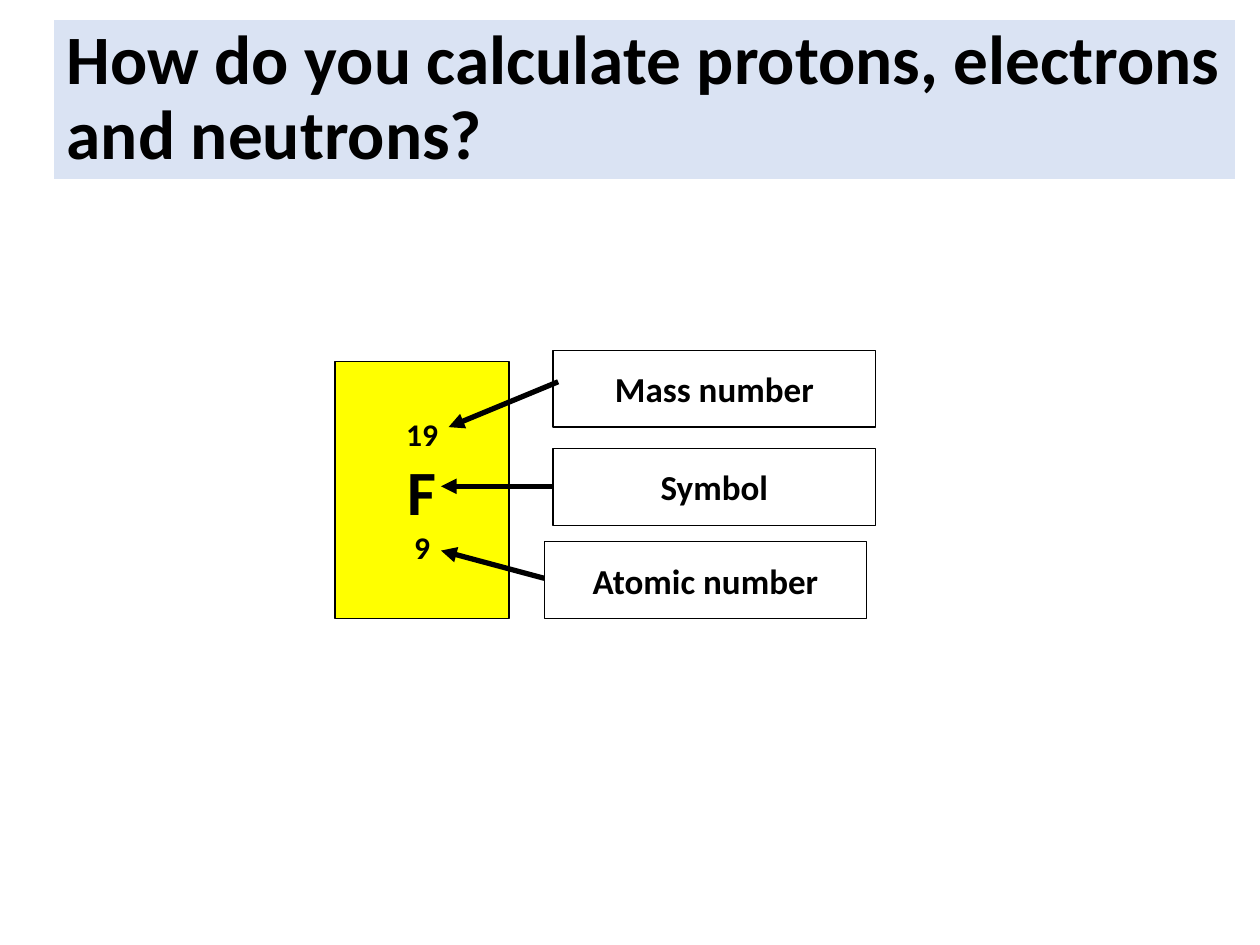
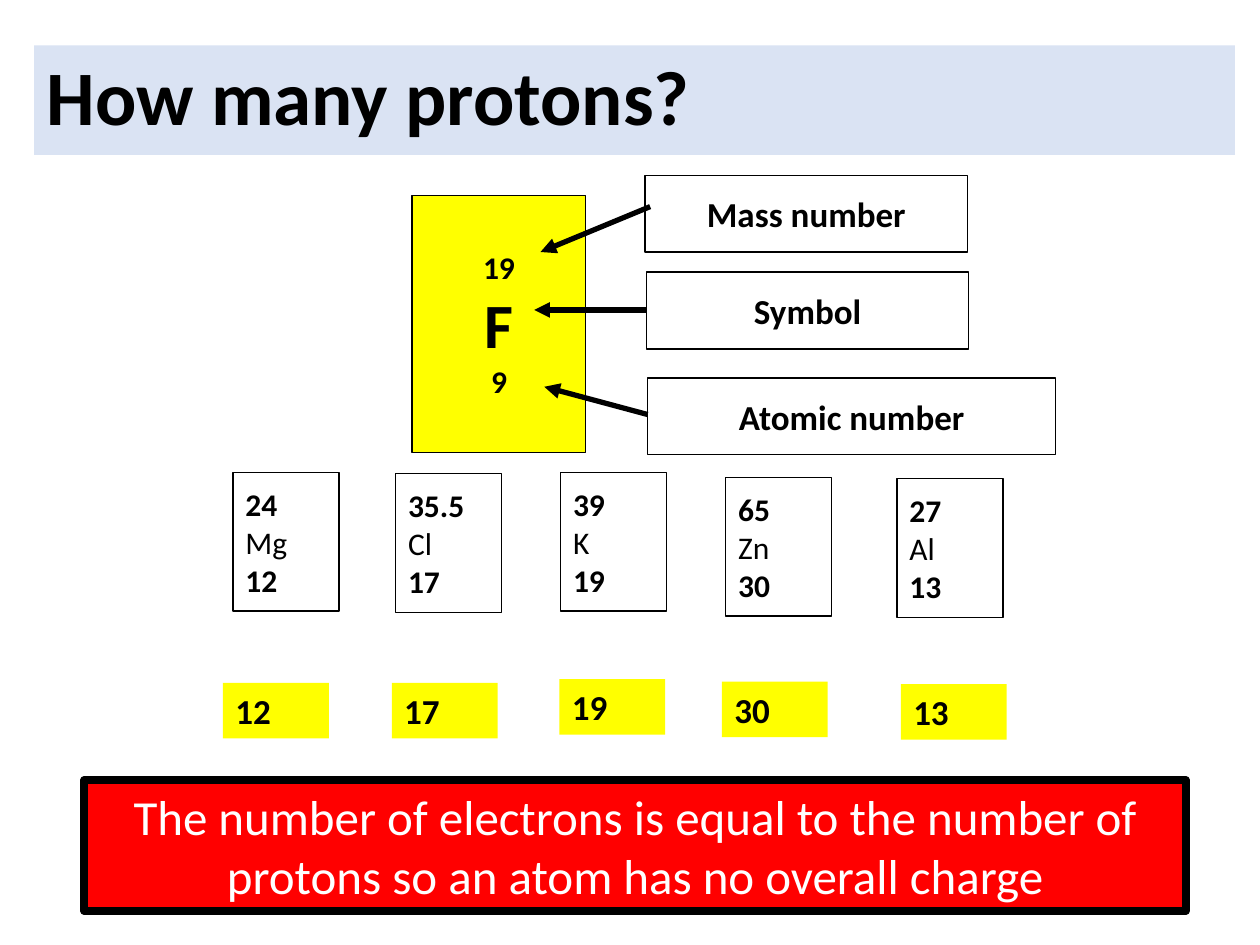
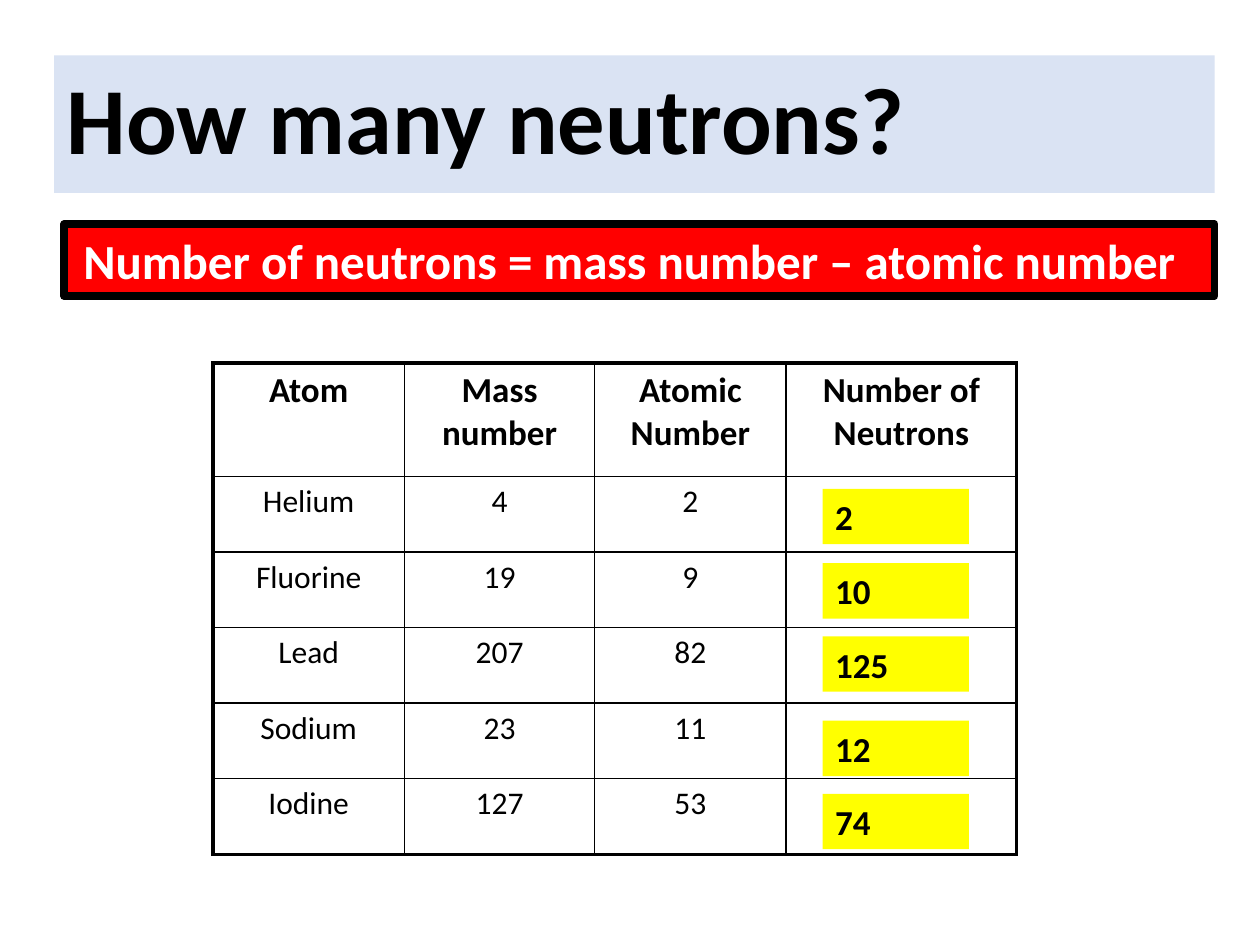
"""Build three slides on counting protons, electrons and neutrons."""
from lxml import etree
from pptx import Presentation
from pptx.dml.color import RGBColor
from pptx.enum.shapes import MSO_CONNECTOR, MSO_SHAPE
from pptx.enum.text import MSO_ANCHOR, MSO_AUTO_SIZE, PP_ALIGN
from pptx.oxml.ns import qn
from pptx.util import Inches, Pt

RECT = MSO_SHAPE.RECTANGLE
STRAIGHT = MSO_CONNECTOR.STRAIGHT
MIDDLE = MSO_ANCHOR.MIDDLE
FIXED = MSO_AUTO_SIZE.NONE
LEFT, CENTER = PP_ALIGN.LEFT, PP_ALIGN.CENTER

BLACK = RGBColor(0x00, 0x00, 0x00)
WHITE = RGBColor(0xFF, 0xFF, 0xFF)
YELLOW = RGBColor(0xFF, 0xFF, 0x00)
RED = RGBColor(0xFF, 0x00, 0x00)
PALE_BLUE = RGBColor(0xDA, 0xE3, 0xF3)

FONT = "Calibri"
TITLE_ONLY = 5
THIN, INNER, OUTER, ARROW, FRAME = 0.75, 1, 2.25, 3, 4.5

POINTERS = [(0.04, 0.25, -0.87, 0.36), (0, 0.3, -0.89, 0), (0, 0.29, -0.82, -0.22)]

ELEMENTS = [
    ("24", "Mg", "12", 1.85, 3.75),
    ("35.5", "Cl", "17", 3.14, 3.76),
    ("39", "K", "19", 4.45, 3.75),
    ("65", "Zn", "30", 5.76, 3.79),
    ("27", "Al", "13", 7.12, 3.8),
]
PROTON_SPOTS = [(1.77, 5.42), (3.11, 5.42), (4.44, 5.39), (5.73, 5.41), (7.15, 5.43)]

ATOM_ROWS = [
    ("Atom", "Mass number", "Atomic Number", "Number of Neutrons"),
    ("Helium", "4", "2", ""),
    ("Fluorine", "19", "9", ""),
    ("Lead", "207", "82", ""),
    ("Sodium", "23", "11", ""),
    ("Iodine", "127", "53", ""),
]
NEUTRONS = [("2", 3.88), ("10", 4.47), ("125", 5.05), ("12", 5.72), ("74", 6.3)]


class Deck:
    """Hold the shared style and the slide being filled."""

    def __init__(self):
        self.prs = Presentation()
        self.prs.slide_width, self.prs.slide_height = Inches(10), Inches(7.5)
        self.s = None

    def style(self, p, size, bold=True, color=BLACK, align=LEFT):
        """Set the font and alignment of a paragraph."""
        p.alignment = align
        p.font.name, p.font.size, p.font.bold = FONT, Pt(size), bold
        p.font.color.rgb = color

    def slide(self, title, size, left, top, width, height):
        """Start a slide with a title on a pale band."""
        self.s = self.prs.slides.add_slide(self.prs.slide_layouts[TITLE_ONLY])
        sp = self.s.shapes.title
        sp.left, sp.top = Inches(left), Inches(top)
        sp.width, sp.height = Inches(width), Inches(height)
        sp.fill.solid()
        sp.fill.fore_color.rgb = PALE_BLUE
        tf = sp.text_frame
        tf.text, tf.word_wrap, tf.auto_size = title, True, FIXED
        tf.vertical_anchor = MIDDLE
        tf.paragraphs[0].line_spacing = 0.9
        self.style(tf.paragraphs[0], size)

    def box(self, lines, left, top, width, height, fill=WHITE, line=THIN,
            color=BLACK, align=LEFT):
        """Add a rectangle whose lines are (text, size, bold)."""
        sp = self.s.shapes.add_shape(
            RECT, Inches(left), Inches(top), Inches(width), Inches(height))
        sp.shadow.inherit = False
        sp.fill.solid()
        sp.fill.fore_color.rgb = fill
        if line:
            sp.line.color.rgb, sp.line.width = BLACK, Pt(line)
        else:
            sp.line.fill.background()
        tf = sp.text_frame
        tf.word_wrap, tf.vertical_anchor = True, MIDDLE
        for i, (text, size, bold) in enumerate(lines):
            p = tf.paragraphs[0] if i == 0 else tf.add_paragraph()
            p.text = text
            self.style(p, size, bold, color, align)
        return sp

    def chip(self, text, left, top, width):
        """Add a yellow answer."""
        self.box([(text, 20, True)], left, top, width, 0.44, YELLOW, None)

    def banner(self, text, left, top, width, height, bold):
        """Add a red message in a heavy black frame."""
        return self.box([(text, 28, bold)], left, top, width, height,
                        RED, FRAME, WHITE, CENTER)

    def arrow(self, x, y, dx, dy):
        """Add an arrow that starts at x, y and spans dx, dy."""
        c = self.s.shapes.add_connector(
            STRAIGHT, Inches(x), Inches(y), Inches(x + dx), Inches(y + dy))
        c.line.color.rgb, c.line.width = BLACK, Pt(ARROW)
        etree.SubElement(c.line._get_or_add_ln(), qn("a:tailEnd"), type="triangle")
        etree.SubElement(c._element.spPr, qn("a:effectLst"))

    def symbol_key(self, left, top, labels):
        """Add the fluorine tile with labels given as (text, left, top, width)."""
        self.box([("19", 18, True), ("F", 36, True), ("9", 18, True)],
                 left, top, 1.38, 2.04, YELLOW, align=CENTER)
        for (text, x, y, width), (ox, oy, dx, dy) in zip(labels, POINTERS):
            self.box([(text, 20, True)], x, y, width, 0.61, align=CENTER)
            self.arrow(x + ox, y + oy, dx, dy)

    def border(self, cell, edges):
        """Draw the four edges of a cell, given as tag to width."""
        tcPr = cell._tc.get_or_add_tcPr()
        for tag, width in edges.items():
            ln = etree.SubElement(tcPr, qn(f"a:{tag}"), w=str(Pt(width)))
            fill = etree.SubElement(ln, qn("a:solidFill"))
            etree.SubElement(fill, qn("a:srgbClr"), val=str(BLACK))

    def table(self, rows, left, top, widths, heights):
        """Add a white table with a heavier outer border."""
        last_row, last_col = len(heights) - 1, len(widths) - 1
        table = self.s.shapes.add_table(
            len(heights), len(widths), Inches(left), Inches(top),
            Inches(sum(widths)), Inches(sum(heights))).table
        table.first_row = table.horz_banding = False
        for column, width in zip(table.columns, widths):
            column.width = Inches(width)
        for r, height in enumerate(heights):
            table.rows[r].height = Inches(height)
            for c, text in enumerate(rows[r]):
                cell = table.cell(r, c)
                self.border(cell, {
                    "lnL": OUTER if c == 0 else INNER,
                    "lnR": OUTER if c == last_col else INNER,
                    "lnT": OUTER if r == 0 else INNER,
                    "lnB": OUTER if r == last_row else INNER})
                cell.fill.solid()
                cell.fill.fore_color.rgb = WHITE
                cell.text = text
                self.style(cell.text_frame.paragraphs[0], 18 if r else 20,
                           r == 0, align=CENTER)


def main():
    deck = Deck()

    deck.slide("How do you calculate protons, electrons and neutrons?", 39.6,
               0.43, 0.16, 9.37, 1.26)
    deck.symbol_key(2.66, 2.87, [("Mass number", 4.39, 2.78, 2.56),
                                 ("Symbol", 4.39, 3.56, 2.56),
                                 ("Atomic number", 4.32, 4.3, 2.56)])

    deck.slide("How many protons?", 44, 0.27, 0.36, 9.53, 0.87)
    for (mass, symbol, number, x, y), spot in zip(ELEMENTS, PROTON_SPOTS):
        deck.box([(mass, 18, True), (symbol, 18, False), (number, 18, True)],
                 x, y, 0.84, 1.1)
        deck.chip(number, *spot, 0.84)
    deck.banner("The number of electrons is equal to the number of protons "
                "so an atom has no overall charge", 0.67, 6.19, 8.74, 1.04, False)
    deck.symbol_key(3.27, 1.55, [("Mass number", 5.12, 1.39, 2.56),
                                 ("Symbol", 5.13, 2.16, 2.56),
                                 ("Atomic number", 5.14, 3, 3.24)])

    deck.slide("How many neutrons?", 54, 0.43, 0.44, 9.21, 1.09)
    deck.table(ATOM_ROWS, 1.69, 2.88, [1.52, 1.51, 1.52, 1.83], [0.9] + [0.6] * 5)
    for count, y in NEUTRONS:
        deck.chip(count, 6.53, y, 1.16)
    rule = deck.banner("Number of neutrons = mass number – atomic number",
                       0.51, 1.78, 9.13, 0.57, True)
    rule.text_frame.margin_right = Inches(0.26)

    deck.prs.save("out.pptx")


if __name__ == "__main__":
    main()
